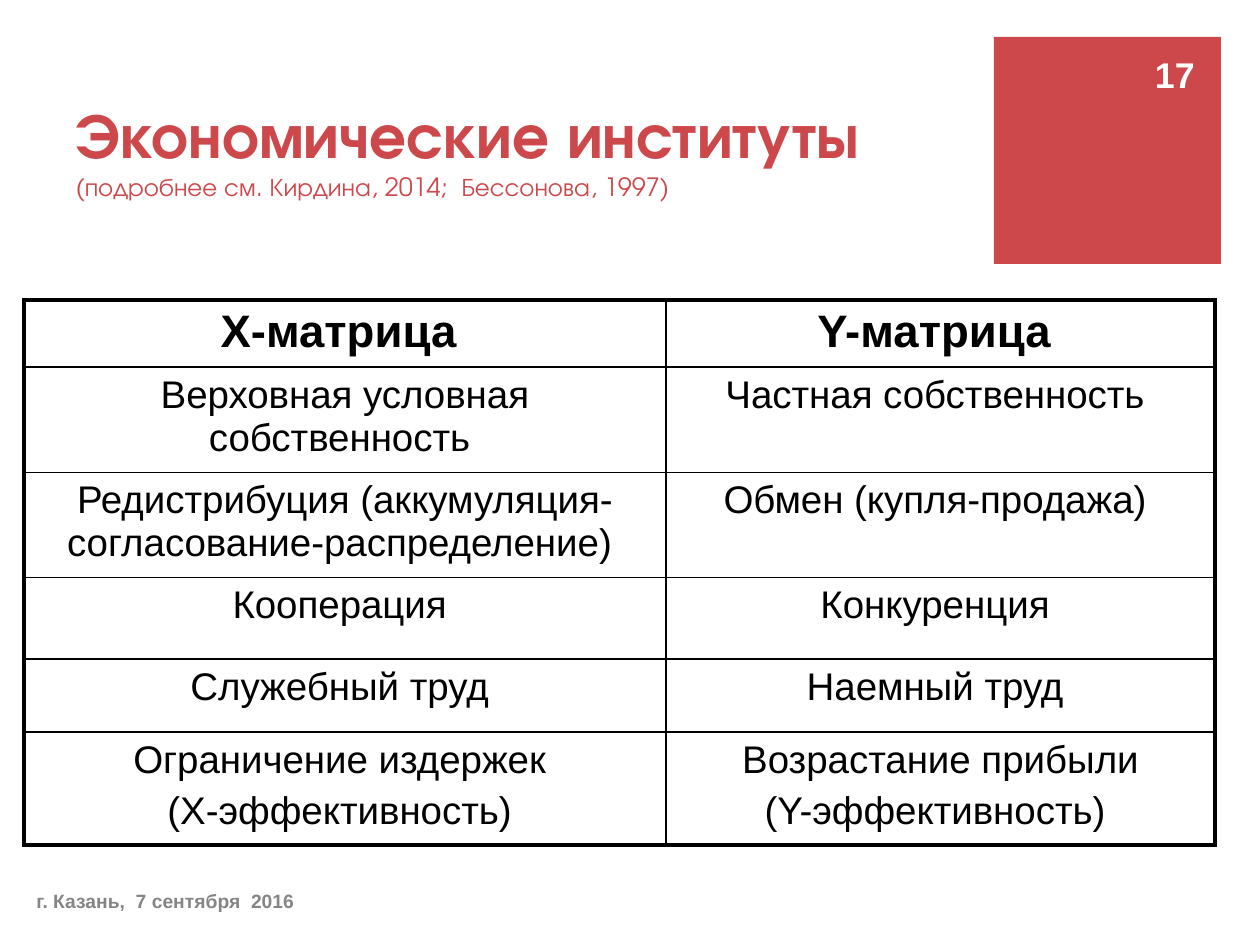
from lxml.etree import SubElement
from pptx import Presentation
from pptx.dml.color import RGBColor
from pptx.enum.shapes import MSO_SHAPE as Shape
from pptx.enum.text import MSO_ANCHOR as Anchor, MSO_AUTO_SIZE as AutoSize, PP_ALIGN as Align
from pptx.oxml.ns import qn
from pptx.util import Pt

PX = 914400 // 126
COLORS = {"accent": "CC484B", "footer": "858585", "light": "FFFFFF", "ink": "000000"}
BODY_FONT, TITLE_FONT = "Arial", "TeX Gyre Adventor"
COLUMN_WIDTHS = [642, 549]
ROW_HEIGHTS = [63, 104, 103, 82, 73, 106]
OUTER_LINE, INNER_LINE = 2.25, 1
ROWS = [
    ("Х-матрица ", "Y-матрица "),
    ("Верховная условная собственность ", "Частная собственность "),
    ("Редистрибуция (аккумуляция-согласование-распределение) ", "Обмен (купля-продажа) "),
    ("Кооперация ", "Конкуренция "),
    ("Служебный труд ", "Наемный труд "),
    ("Ограничение издержек \n(Х-эффективность) ", "Возрастание прибыли\n(Y-эффективность) "),
]


def px(*lengths):
    return [length * PX for length in lengths]


def rgb(name):
    return RGBColor.from_string(COLORS[name])


def add_span(para, text, color, **format_values):
    span = para.add_run()
    span.text = text
    span.font.color.rgb = rgb(color)
    for name, value in format_values.items():
        setattr(span.font, name, value)


def add_title(page, heading, reference):
    title = page.shapes.title
    title.left, title.top, title.width, title.height = px(63, 16, 945, 192)
    frame = title.text_frame
    frame.auto_size, frame.vertical_anchor = AutoSize.NONE, Anchor.BOTTOM
    para = frame.paragraphs[0]
    para.alignment = Align.LEFT
    add_span(para, heading, "accent", name=TITLE_FONT, size=Pt(36), bold=True)
    para.add_line_break()
    add_span(para, reference, "accent", name=TITLE_FONT, size=Pt(14.4), bold=False)


def add_square(page, place):
    square = page.shapes.add_shape(Shape.RECTANGLE, *px(*place))
    square.shadow.inherit = False
    square.fill.solid()
    square.fill.fore_color.rgb = rgb("accent")
    square.line.fill.background()


def add_label(page, place, text, size, color, align):
    frame = page.shapes.add_textbox(*px(*place)).text_frame
    frame.word_wrap, frame.vertical_anchor = True, Anchor.MIDDLE
    para = frame.paragraphs[0]
    para.alignment = align
    add_span(para, text, color, name=BODY_FONT, size=Pt(size), bold=True)


def set_borders(cell, widths):
    """Draw cell edges; widths are points for left, right, top and bottom."""
    properties = cell._tc.get_or_add_tcPr()
    for side, width in zip("LRTB", widths):
        line = SubElement(properties, qn(f"a:ln{side}"), w=str(Pt(width)))
        fill = SubElement(line, qn("a:solidFill"))
        SubElement(fill, qn("a:srgbClr"), val=COLORS["ink"])


def fill_cell(cell, text, size, bold):
    cell.fill.background()
    frame = cell.text_frame
    for index, line in enumerate(text.split("\n")):
        para = frame.add_paragraph() if index else frame.paragraphs[0]
        para.alignment = Align.CENTER
        if index:
            para.space_before = Pt(4.4)
        add_span(para, line, "ink", name=BODY_FONT, size=Pt(size), bold=bold)


def add_matrix_table(page):
    place = px(24, 300, sum(COLUMN_WIDTHS), sum(ROW_HEIGHTS))
    table = page.shapes.add_table(len(ROWS), len(COLUMN_WIDTHS), *place).table
    table.first_row = table.horz_banding = False
    for column, width in zip(table.columns, px(*COLUMN_WIDTHS)):
        column.width = width
    for row, height in zip(table.rows, px(*ROW_HEIGHTS)):
        row.height = height
    last_row, last_column = len(ROWS) - 1, len(COLUMN_WIDTHS) - 1
    for r, texts in enumerate(ROWS):
        for c, text in enumerate(texts):
            cell = table.cell(r, c)
            on_edge = (c == 0, c == last_column, r == 0, r == last_row)
            set_borders(cell, [OUTER_LINE if edge else INNER_LINE for edge in on_edge])
            fill_cell(cell, text, size=22 if r else 26, bold=r == 0)


def main():
    deck = Presentation()
    deck.slide_width, deck.slide_height = px(1260, 945)
    page = deck.slides.add_slide(deck.slide_layouts[5])
    add_square(page, (994, 37, 227, 227))
    add_title(page, "Экономические институты", "(подробнее см. Кирдина, 2014;  Бессонова, 1997)")
    add_label(page, (24, 876, 828, 50), "г. Казань,  7 сентября  2016", 11, "footer", Align.LEFT)
    add_label(page, (1138, 49, 69, 50), "17", 20.4, "light", Align.RIGHT)
    add_matrix_table(page)
    deck.save("out.pptx")


if __name__ == "__main__":
    main()
